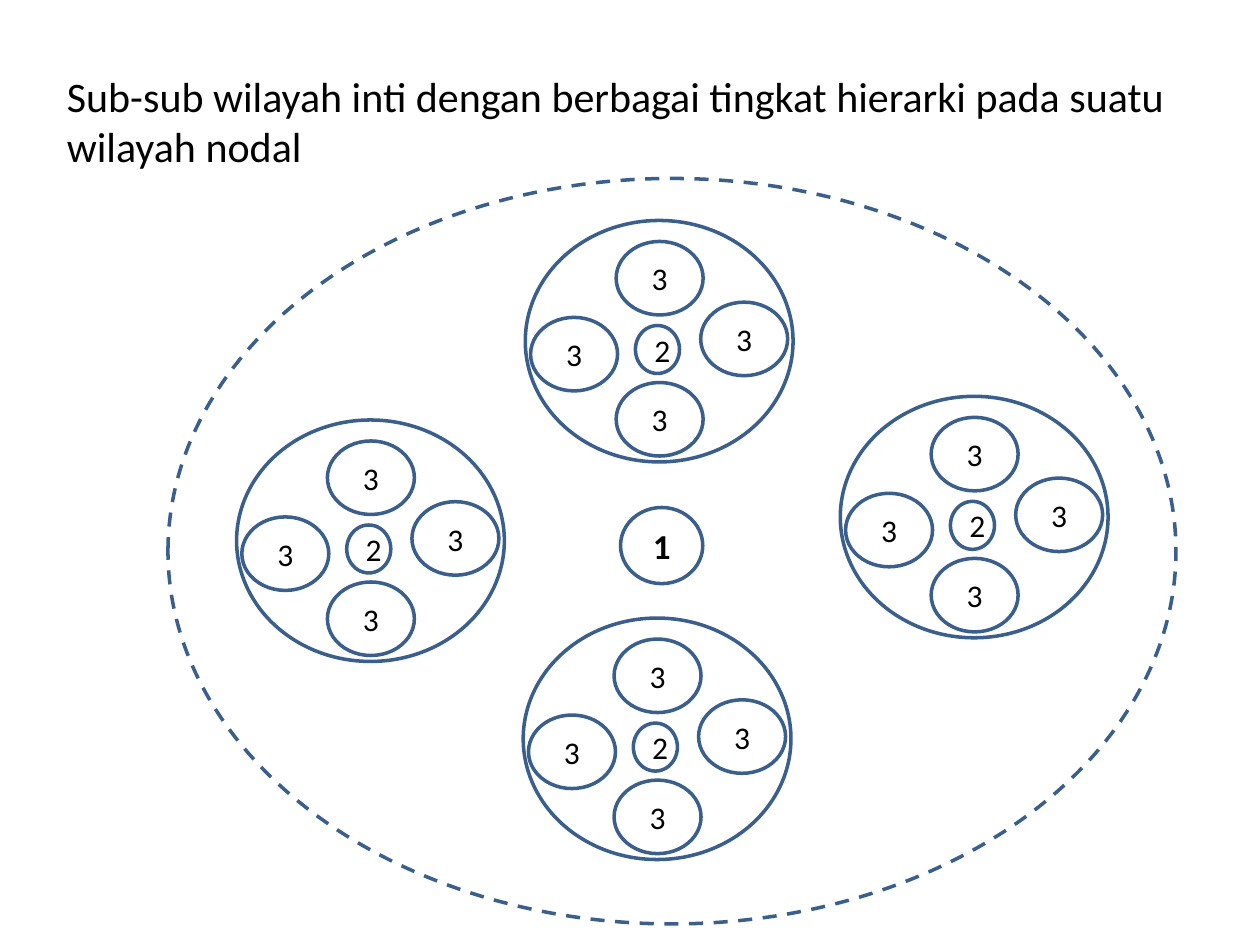
from dataclasses import dataclass

from pptx import Presentation
from pptx.dml.color import RGBColor
from pptx.enum.dml import MSO_LINE
from pptx.enum.shapes import MSO_SHAPE
from pptx.enum.text import MSO_ANCHOR, PP_ALIGN
from pptx.util import Pt


@dataclass(frozen=True)
class Theme:
    font: str = "Calibri"
    text: RGBColor = RGBColor(0x00, 0x00, 0x00)
    outline: RGBColor = RGBColor(0x3A, 0x5F, 0x8C)
    outline_width: float = 2
    title_size: float = 24
    core_size: float = 20
    label_size: float = 18


THEME = Theme()

TITLE = "Sub-sub wilayah inti dengan berbagai tingkat hierarki pada suatu wilayah nodal"
TITLE_BOX = (31, 24, 648, 90)

# Boxes are left, top, width, height in points.
NODAL_REGION = (96, 102, 576, 426)
CORE = ("1", (354.6, 290, 47, 43.5))

# Every sub-region repeats the same cluster of centres at its own left, top.
CLUSTER_ORIGINS = [(135.2, 240), (300.2, 126), (480.2, 226.5), (299, 353.2)]
CLUSTER_SIZE = (153, 138)
CLUSTER_CENTRES = [
    ("3", (51.9, 12, 49.7, 42)),
    ("3", (51.9, 92.6, 49.7, 42)),
    ("3", (3, 55.4, 49.7, 42)),
    ("3", (100.2, 46.7, 49.7, 42)),
    ("2", (62.9, 60, 25.2, 27.4)),
]


def add_styled_run(paragraph, text, size, bold=False):
    run = paragraph.add_run()
    run.text = text
    run.font.name = THEME.font
    run.font.size = Pt(size)
    run.font.bold = bold
    run.font.color.rgb = THEME.text


def add_ring(shapes, box, label="", size=THEME.label_size, bold=False):
    """Add an unfilled ellipse with an optional centred label."""
    ring = shapes.add_shape(MSO_SHAPE.OVAL, *map(Pt, box))
    ring.shadow.inherit = False
    ring.fill.background()
    ring.line.color.rgb = THEME.outline
    ring.line.width = Pt(THEME.outline_width)
    if label:
        ring.text_frame.vertical_anchor = MSO_ANCHOR.MIDDLE
        paragraph = ring.text_frame.paragraphs[0]
        paragraph.alignment = PP_ALIGN.CENTER
        add_styled_run(paragraph, label, size, bold)
    return ring


def add_cluster(slide, left, top):
    cluster = slide.shapes.add_group_shape()
    add_ring(cluster.shapes, (left, top, *CLUSTER_SIZE))
    for level, (dx, dy, width, height) in CLUSTER_CENTRES:
        add_ring(cluster.shapes, (left + dx, top + dy, width, height), level)


def add_title(slide):
    title = slide.shapes.title
    title.left, title.top, title.width, title.height = map(Pt, TITLE_BOX)
    title.text_frame.vertical_anchor = MSO_ANCHOR.MIDDLE
    paragraph = title.text_frame.paragraphs[0]
    paragraph.alignment = PP_ALIGN.LEFT
    add_styled_run(paragraph, TITLE, THEME.title_size)


def main():
    presentation = Presentation()
    presentation.slide_width, presentation.slide_height = Pt(720), Pt(540)
    slide = presentation.slides.add_slide(presentation.slide_layouts[5])

    add_title(slide)
    for left, top in CLUSTER_ORIGINS:
        add_cluster(slide, left, top)
    core_level, core_box = CORE
    add_ring(slide.shapes, core_box, core_level, THEME.core_size, bold=True)
    region = add_ring(slide.shapes, NODAL_REGION)
    region.line.dash_style = MSO_LINE.DASH

    presentation.save("out.pptx")


if __name__ == "__main__":
    main()
